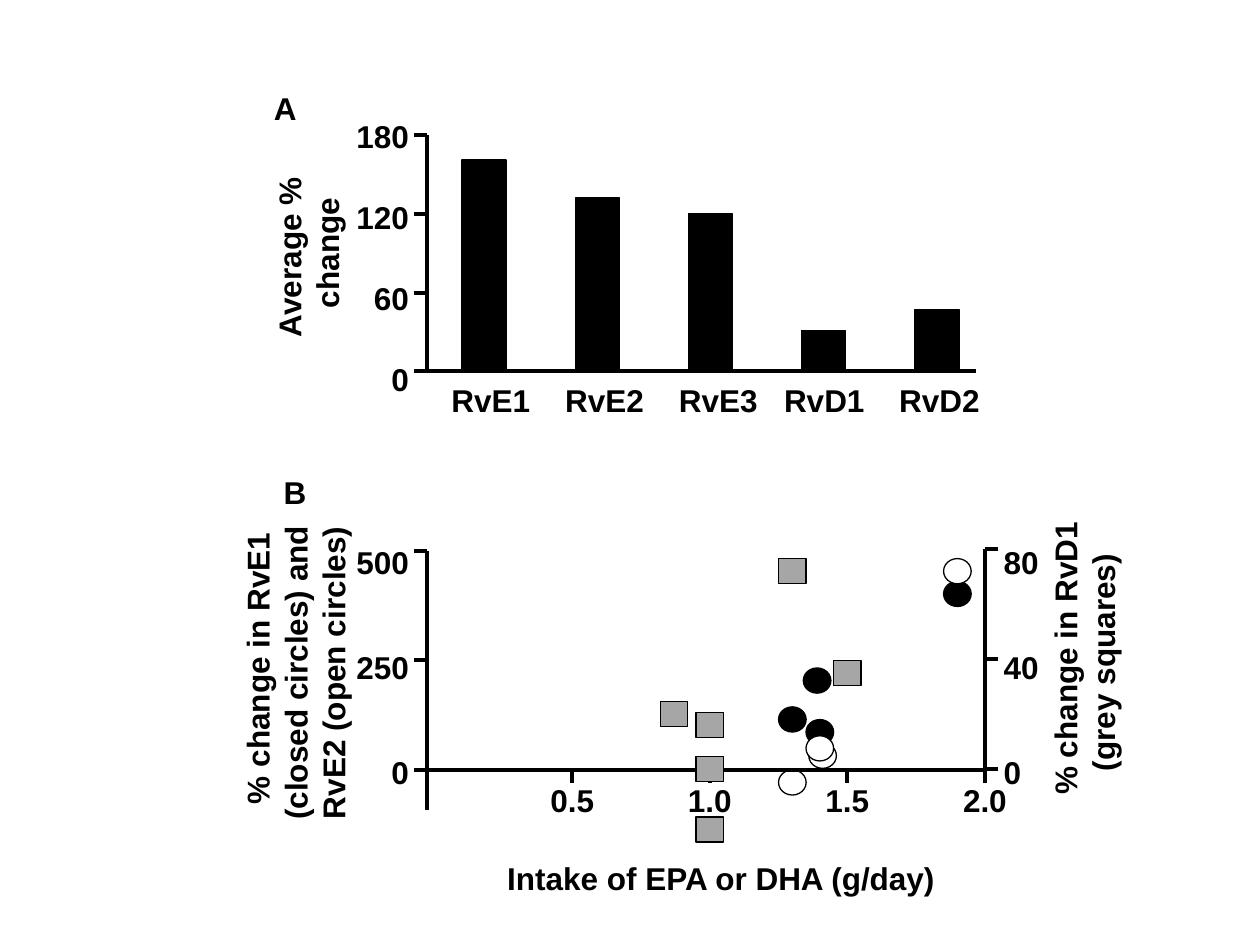
from dataclasses import dataclass

from lxml.etree import SubElement
from pptx import Presentation
from pptx.dml.color import RGBColor
from pptx.enum.shapes import MSO_CONNECTOR, MSO_SHAPE
from pptx.enum.text import MSO_ANCHOR as Anchor, PP_ALIGN as Align
from pptx.oxml.ns import qn
from pptx.util import Pt

BLACK, WHITE, GREY = "000000", "FFFFFF", "A6A6A6"
AXIS_X = 244.1
TICK = 7.5
LABEL_WIDTH = 44


@dataclass
class Bar:
    label: str
    value: float
    label_center: float


@dataclass
class Series:
    geometry: MSO_SHAPE
    color: str
    points: list[tuple[float, float]]


@dataclass
class Scale:
    """Linear mapping from values to a position on the slide."""
    zero: float
    per_unit: float

    def at(self, value: float) -> float:
        return self.zero + value * self.per_unit


BARS = [
    Bar("RvE1", 161, 280.4),
    Bar("RvE2", 132, 345.4),
    Bar("RvE3", 120, 410.4),
    Bar("RvD1", 31, 471),
    Bar("RvD2", 47, 536.8),
]
CLOSED = Series(MSO_SHAPE.OVAL, BLACK,
                [(1.9, 402), (1.39, 204), (1.4, 86), (1.3, 115)])
OPEN = Series(MSO_SHAPE.OVAL, WHITE,
              [(1.9, 454), (1.3, -29), (1.41, 32), (1.4, 49)])
SQUARES = Series(MSO_SHAPE.RECTANGLE, GREY,
                 [(1.3, 72), (1, -22), (1.5, 35), (1, 0), (1, 16), (0.87, 20)])

BAR_Y = Scale(212.2, -0.75)
INTAKE_X = Scale(248.4, 157.2)
LEFT_Y = Scale(439.9, -0.25)
RIGHT_Y = Scale(439.5, -1.57)


def rgb(color: str) -> RGBColor:
    return RGBColor.from_string(color)


def add_text(slide, text: str, center_x: float, center_y: float, *, width: float = 60,
             height: float = 28, size: float = 18, color: str = BLACK, bold: bool = True,
             align=Align.CENTER, rotation: float = 0) -> None:
    """Add text centred on a point; each line becomes a paragraph."""
    box = slide.shapes.add_textbox(Pt(center_x - width / 2), Pt(center_y - height / 2),
                                   Pt(width), Pt(height))
    box.rotation = rotation
    frame = box.text_frame
    frame.word_wrap = True
    frame.vertical_anchor = Anchor.MIDDLE
    frame.margin_left = frame.margin_right = frame.margin_top = frame.margin_bottom = 0
    frame.text = text
    for paragraph in frame.paragraphs:
        paragraph.alignment = align
        font = paragraph.font
        font.name, font.size, font.bold = "Arial", Pt(size), bold
        font.color.rgb = rgb(color)


def add_line(slide, x1: float, y1: float, x2: float, y2: float) -> None:
    line = slide.shapes.add_connector(MSO_CONNECTOR.STRAIGHT, Pt(x1), Pt(y1), Pt(x2), Pt(y2))
    line.line.color.rgb = rgb(BLACK)
    line.line.width = Pt(2.25)
    SubElement(line._element.spPr, qn("a:effectLst"))


def add_figure(slide, geometry: MSO_SHAPE, left: float, top: float, width: float,
               height: float, color: str) -> None:
    shape = slide.shapes.add_shape(geometry, Pt(left), Pt(top), Pt(width), Pt(height))
    shape.shadow.inherit = False
    shape.fill.solid()
    shape.fill.fore_color.rgb = rgb(color)
    shape.line.color.rgb = rgb(BLACK)
    shape.line.width = Pt(0.75)


def add_markers(slide, series: Series, y_scale: Scale) -> None:
    width, height = 15.8, 14.4
    for x, y in series.points:
        add_figure(slide, series.geometry, INTAKE_X.at(x) - width / 2,
                   y_scale.at(y) - height / 2, width, height, series.color)


def add_left_ticks(slide, scale: Scale, values: list[int], first_label: float,
                   label_step: float) -> None:
    """Draw ticks and right-aligned numbers, lowest value first."""
    for index, value in enumerate(values):
        y = scale.at(value)
        add_line(slide, AXIS_X - TICK, y, AXIS_X, y)
        add_text(slide, str(value), 233.6 - LABEL_WIDTH / 2, first_label - index * label_step,
                 width=LABEL_WIDTH, align=Align.RIGHT)


def draw_bar_panel(slide) -> None:
    add_text(slide, "A", 163, 61.5)
    add_line(slide, AXIS_X, BAR_Y.at(180), AXIS_X, BAR_Y.zero)
    add_line(slide, AXIS_X, BAR_Y.zero, 557.5, BAR_Y.zero)
    add_left_ticks(slide, BAR_Y, [0, 60, 120, 180], 216.5, 46.2)
    add_text(slide, "Average % \nchange", 175.8, 144.5, width=112, height=51, rotation=270)
    for index, bar in enumerate(BARS):
        top = BAR_Y.at(bar.value)
        add_figure(slide, MSO_SHAPE.RECTANGLE, 264 + index * 64.7, top, 25.2,
                   BAR_Y.zero - top, BLACK)
        add_text(slide, bar.label, bar.label_center, 228.3)


def draw_scatter_panel(slide) -> None:
    add_text(slide, "B", 168.6, 281)
    add_markers(slide, CLOSED, LEFT_Y)
    add_markers(slide, OPEN, LEFT_Y)

    right_x = INTAKE_X.at(2)
    add_line(slide, AXIS_X, LEFT_Y.at(500), AXIS_X, 463)
    add_line(slide, AXIS_X, LEFT_Y.zero, right_x, LEFT_Y.zero)
    add_left_ticks(slide, LEFT_Y, [0, 250, 500], 441, 59.9)
    for intake in (0.5, 1.0, 1.5, 2.0):
        x = INTAKE_X.at(intake)
        add_line(slide, x, LEFT_Y.zero, x, LEFT_Y.zero + TICK)
        add_text(slide, f"{intake:.1f}", x, 457)
    add_markers(slide, SQUARES, RIGHT_Y)

    add_line(slide, right_x, RIGHT_Y.at(80), right_x, RIGHT_Y.zero)
    for index, value in enumerate((0, 40, 80)):
        y = RIGHT_Y.at(value)
        add_line(slide, right_x, y, right_x + TICK, y)
        add_text(slide, str(value), 573.6 + LABEL_WIDTH / 2, 441 - index * 59.9,
                 width=LABEL_WIDTH, align=Align.LEFT)

    add_text(slide, "% change in RvE1\n(closed circles) and \nRvE2 (open circles) ",
             168.5, 382, width=190, height=73, rotation=270)
    add_text(slide, "% change in RvD1\n(grey squares) ", 619.2, 376.2,
             width=172, height=51, rotation=270)
    add_text(slide, "Intake of EPA or DHA (g/day)", 412, 501.5, width=262)


def main() -> None:
    presentation = Presentation()
    presentation.slide_width, presentation.slide_height = Pt(720), Pt(540)
    slide = presentation.slides.add_slide(presentation.slide_layouts[6])
    draw_bar_panel(slide)
    draw_scatter_panel(slide)
    presentation.save("out.pptx")


if __name__ == "__main__":
    main()
